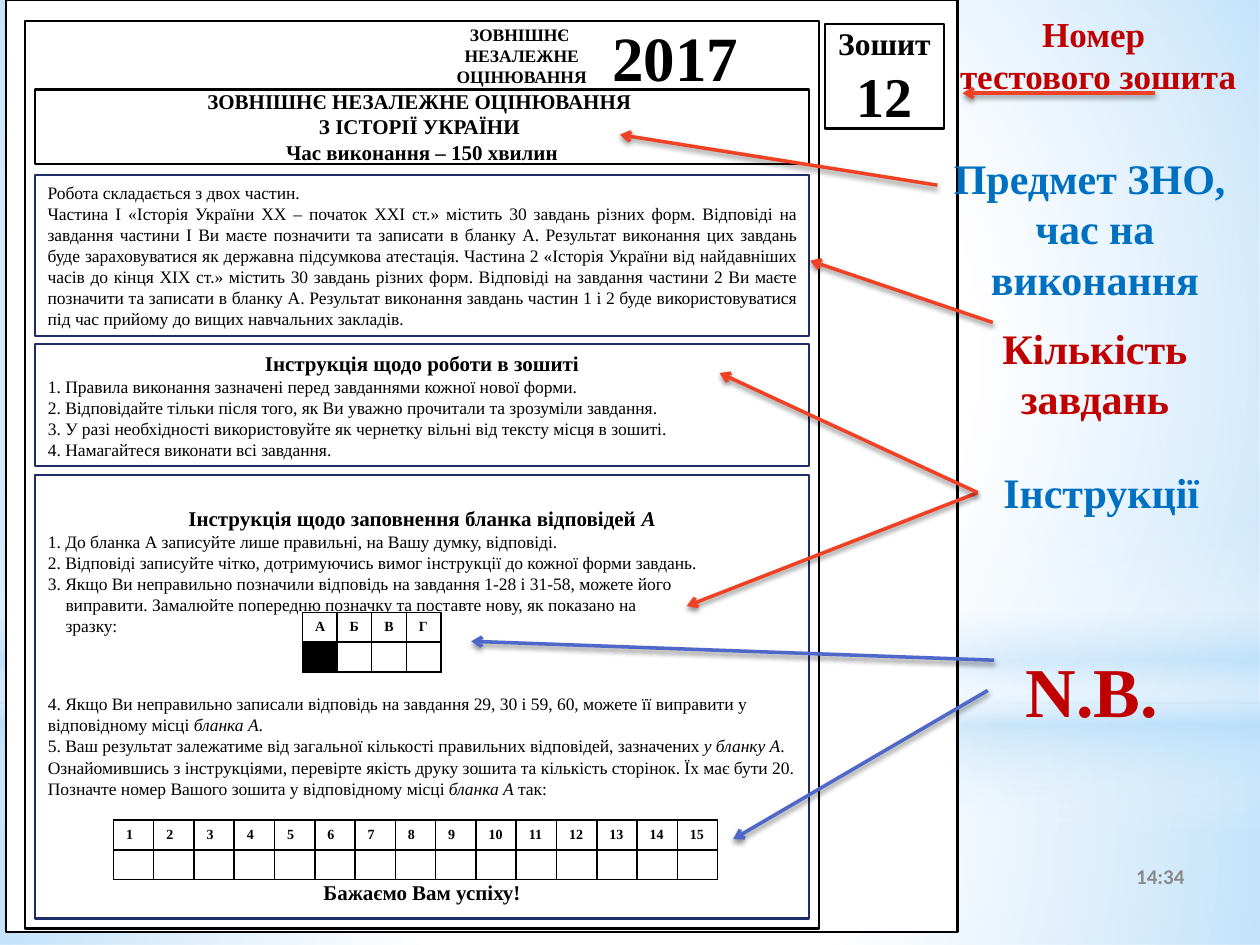
from dataclasses import dataclass
from typing import Optional

from lxml import etree
from pptx import Presentation
from pptx import util as u
from pptx.dml.color import RGBColor
from pptx.enum import shapes, text
from pptx.oxml import parse_xml
from pptx.oxml.ns import nsdecls, qn

EMU_PER_PX = 9144  # 100 px to the inch
FONT = "Times New Roman"
COLORS = {"white": "FFFFFF", "black": "000000", "gray": "898989", "navy": "1F2E69",
          "red": "C00000", "blue": "0070C0", "orange": "F14124", "indigo": "4E67C8",
          "sky": "B4DCFA"}
LEFT, CENTER, RIGHT, JUSTIFY = (getattr(text.PP_ALIGN, name)
                                for name in ("LEFT", "CENTER", "RIGHT", "JUSTIFY"))
TOP, MIDDLE = text.MSO_ANCHOR.TOP, text.MSO_ANCHOR.MIDDLE
RECT, OVAL = shapes.MSO_SHAPE.RECTANGLE, shapes.MSO_SHAPE.OVAL


@dataclass
class Line:
    words: str  # parts between asterisks are italic
    size: int = 10
    bold: bool = False
    align: int = LEFT
    color: str = "black"
    before: int = 0
    margin: int = 0
    hang: int = 0
    font: str = FONT


@dataclass
class Panel:
    box: tuple
    lines: tuple = ()
    border: Optional[str] = None
    fill: Optional[str] = None
    anchor: int = MIDDLE
    top_inset: int = 5
    placeholder: Optional[int] = None


@dataclass
class Glow:
    box: tuple
    stops: tuple  # position %, color, opacity %
    kind: int = RECT
    linear: bool = False


@dataclass
class Grid:
    box: tuple
    labels: tuple
    marked: Optional[int] = None


@dataclass
class Arrow:
    ends: tuple
    color: str = "orange"


def px(*lengths: int) -> list:
    return [u.Emu(length * EMU_PER_PX) for length in lengths]


def rgb(name: str) -> RGBColor:
    return RGBColor.from_string(COLORS[name])


def bold(words: str, size: int, color: str = "black", **extra) -> Line:
    return Line(words, size, True, CENTER, color, **extra)


def draw_glow(slide, glow: Glow, position: int) -> None:
    """Draw a soft gradient and place it on the slide master."""
    shape = slide.shapes.add_shape(glow.kind, *px(*glow.box))
    shape.shadow.inherit = False
    shape.line.fill.background()
    stops = "".join(
        f'<a:gs pos="{pos * 1000}"><a:srgbClr val="{COLORS[color]}">'
        f'<a:alpha val="{opacity * 1000}"/></a:srgbClr></a:gs>' for pos, color, opacity in glow.stops)
    direction = '<a:lin ang="5400000" scaled="0"/>' if glow.linear else (
        '<a:path path="circle"><a:fillToRect l="50000" t="50000" r="50000" b="50000"/></a:path>')
    gradient = parse_xml(f'<a:gradFill {nsdecls("a")}><a:gsLst>{stops}</a:gsLst>{direction}</a:gradFill>')
    shape.element.spPr.find(qn("a:prstGeom")).addnext(gradient)
    shape.element.nvSpPr.cNvPr.set("id", str(100 + position))
    slide.slide_layout.slide_master.shapes.element.insert(2 + position, shape.element)


def write_line(paragraph, line: Line) -> None:
    properties = paragraph._p.get_or_add_pPr()
    properties.set("marL", str(line.margin * EMU_PER_PX))
    properties.set("indent", str(-line.hang * EMU_PER_PX))
    etree.SubElement(properties, qn("a:buNone"))
    paragraph.alignment = line.align
    paragraph.space_before = u.Pt(line.before)
    for index, part in enumerate(line.words.split("*")):
        run = paragraph.add_run()
        run.text = part
        values = {"name": line.font, "size": u.Pt(line.size), "bold": line.bold,
                  "italic": index % 2 == 1}
        for key, value in values.items():
            setattr(run.font, key, value)
        run.font.color.rgb = rgb(line.color)


def draw_panel(slide, panel: Panel) -> None:
    left, top, width, height = px(*panel.box)
    if panel.placeholder is not None:
        shape = slide.placeholders[panel.placeholder]
        slide.shapes.element.append(shape.element)  # bring to front
        for key, value in dict(left=left, top=top, width=width, height=height).items():
            setattr(shape, key, value)
    elif panel.border:
        shape = slide.shapes.add_shape(RECT, left, top, width, height)
        shape.shadow.inherit = False
    else:
        shape = slide.shapes.add_textbox(left, top, width, height)
    if panel.fill:
        shape.fill.solid()
        shape.fill.fore_color.rgb = rgb(panel.fill)
    else:
        shape.fill.background()
    if panel.border:
        shape.line.color.rgb = rgb(panel.border)
        shape.line.width = u.Pt(1.25)
    frame = shape.text_frame
    side, top_inset, bottom = px(10, panel.top_inset, 5)
    values = {"word_wrap": True, "auto_size": text.MSO_AUTO_SIZE.NONE,
              "vertical_anchor": panel.anchor, "margin_left": side, "margin_right": side,
              "margin_top": top_inset, "margin_bottom": bottom}
    for key, value in values.items():
        setattr(frame, key, value)
    for index, line in enumerate(panel.lines):
        write_line(frame.add_paragraph() if index else frame.paragraphs[0], line)


def draw_grid(slide, grid: Grid) -> None:
    count = len(grid.labels)
    left, top, width, height = px(*grid.box)
    table = slide.shapes.add_table(2, count, left, top, width, height).table
    table.first_row = table.horz_banding = False
    for column in table.columns:
        column.width = u.Emu(width // count)
    for row_index, row in enumerate(table.rows):
        row.height = u.Emu(height // 2)
        for index, cell in enumerate(row.cells):
            cell.fill.solid()
            cell.fill.fore_color.rgb = rgb("black" if row_index and index == grid.marked else "white")
            for order, side in enumerate("LRTB"):
                cell._tc.get_or_add_tcPr().insert(order, parse_xml(
                    f'<a:ln{side} {nsdecls("a")} w="12700"><a:solidFill>'
                    f'<a:srgbClr val="{COLORS["black"]}"/></a:solidFill></a:ln{side}>'))
            paragraph = cell.text_frame.paragraphs[0]
            if row_index == 0:
                write_line(paragraph, Line(grid.labels[index], 8, True))
            else:
                paragraph._p.get_or_add_endParaRPr().set("sz", "800")


def draw_arrow(slide, arrow: Arrow) -> None:
    connector = slide.shapes.add_connector(shapes.MSO_CONNECTOR.STRAIGHT, *px(*arrow.ends))
    connector.line.color.rgb = rgb(arrow.color)
    connector.line.width = u.Pt(2)
    etree.SubElement(connector.line._get_or_add_ln(), qn("a:tailEnd"), type="arrow")
    connector.element.spPr.append(parse_xml(
        f'<a:effectLst {nsdecls("a")}><a:outerShdw blurRad="39370" dist="22860" dir="5400000">'
        f'<a:srgbClr val="{COLORS["black"]}"><a:alpha val="45000"/></a:srgbClr>'
        '</a:outerShdw></a:effectLst>'))


GLOWS = (
    Glow((0, 558, 1000, 192), ((0, "white", 91), (37, "white", 76), (100, "sky", 79))),
    Glow((0, 0, 1000, 558), ((0, "white", 89), (48, "white", 62), (100, "sky", 79))),
    Glow((0, 412, 1000, 250), ((0, "white", 0), (29, "white", 30), (45, "sky", 40),
                               (55, "white", 26), (65, "sky", 60), (100, "white", 0)), linear=True),
    Glow((0, 175, 1000, 558), ((0, "white", 100), (56, "white", 0)), OVAL),
)

PANELS = (
    # Clock, page and booklet cover
    Panel((675, 675, 275, 40), (Line("14:34", 12, True, RIGHT, "gray", font="Calibri"),)),
    Panel((5, 0, 755, 740), border="black", fill="white"),
    Panel((20, 17, 630, 720), border="black"),
    Panel((655, 19, 94, 83), (bold("Зошит", 18), bold("12", 32)), "black", "white"),
    Panel((335, 17, 158, 54), (bold("ЗОВНІШНЄ ", 10), bold("НЕЗАЛЕЖНЕ ОЦІНЮВАННЯ", 10))),
    Panel((469, 18, 134, 54), (bold("2017", 36),)),
    Panel((28, 71, 614, 59), (bold("ЗОВНІШНЄ НЕЗАЛЕЖНЕ ОЦІНЮВАННЯ ", 12),
                              bold("З ІСТОРІЇ УКРАЇНИ ", 12),
                              bold("Час виконання – 150 хвилин", 12)),
          "black", "white", placeholder=0),
    # Booklet sections
    Panel((28, 139, 614, 128), (
        Line("Робота складається з двох частин."),
        Line("Частина І «Історія України ХХ – початок ХХІ ст.» містить 30 завдань різних форм. "
             "Відповіді на завдання частини І Ви маєте позначити та записати в бланку А. Результат "
             "виконання цих завдань буде зараховуватися як державна підсумкова атестація. Частина 2 "
             "«Історія України від найдавніших часів до кінця ХІХ ст.» містить 30 завдань різних форм. "
             "Відповіді на завдання частини 2 Ви маєте позначити та записати в бланку А. Результат "
             "виконання завдань частин 1 і 2 буде використовуватися під час прийому до вищих "
             "навчальних закладів.", align=JUSTIFY)), "navy"),
    Panel((28, 273, 614, 97), (
        bold("Інструкція щодо роботи в зошиті", 12),
        Line("1. Правила виконання зазначені перед завданнями кожної нової форми."),
        Line("2. Відповідайте тільки після того, як Ви уважно прочитали та зрозуміли завдання."),
        Line("3. У разі необхідності використовуйте як чернетку вільні від тексту місця в зошиті."),
        Line("4. Намагайтеся виконати всі завдання.")), "navy", placeholder=1),
    Panel((28, 377, 614, 352), (
        bold("Інструкція щодо заповнення бланка відповідей *А*", 12),
        Line("1. До бланка А записуйте лише правильні, на Вашу думку, відповіді."),
        Line("2. Відповіді записуйте чітко, дотримуючись вимог інструкції до кожної форми завдань."),
        Line("3. Якщо Ви неправильно позначили відповідь на завдання 1-28 і 31-58, можете його",
             margin=14, hang=14),
        Line("виправити. Замалюйте попередню позначку та поставте нову, як показано на", margin=14),
        Line("зразку:", margin=14),
        Line("4. Якщо Ви неправильно записали відповідь на завдання 29, 30 і 59, 60, можете її "
             "виправити у відповідному місці *бланка А*.", before=33),
        Line("5. Ваш результат залежатиме від загальної кількості правильних відповідей, "
             "зазначених *у бланку А*."),
        Line("Ознайомившись з інструкціями, перевірте якість друку зошита та кількість сторінок. "
             "Їх має бути 20."),
        Line("Позначте номер Вашого зошита у відповідному місці *бланка А* так:"),
        bold("Бажаємо Вам успіху!", 12, before=46)),
        "navy", anchor=TOP, top_inset=24, placeholder=2),
    # Callouts
    Panel((752, 5, 239, 111), (bold("Номер ", 20, "red"), bold("тестового зошита", 20, "red")), anchor=TOP),
    Panel((744, 116, 250, 131), (bold("Предмет ЗНО, ", 24, "blue"),
                                 bold("час на виконання", 24, "blue")), anchor=TOP),
    Panel((764, 365, 220, 51), (bold("Інструкції", 24, "blue"),), anchor=TOP),
    Panel((759, 251, 220, 91), (bold("Кількість завдань", 24, "red"),), anchor=TOP),
    Panel((784, 509, 165, 77), (bold("N.B.", 40, "red"),), anchor=TOP),
)

GRIDS = (Grid((240, 486, 110, 47), tuple("АБВГ"), marked=0),
         Grid((90, 651, 480, 47), tuple(str(number) for number in range(1, 16))))

ARROWS = (Arrow((917, 74, 764, 74)), Arrow((744, 147, 492, 107)), Arrow((788, 256, 643, 207)),
          Arrow((776, 391, 545, 481)), Arrow((776, 391, 571, 296)),
          Arrow((789, 524, 374, 509), "indigo"), Arrow((784, 548, 582, 666), "indigo"))


def main() -> None:
    presentation = Presentation()
    presentation.slide_width, presentation.slide_height = px(1000, 750)
    slide = presentation.slides.add_slide(presentation.slide_layouts[3])
    for position, glow in enumerate(GLOWS):
        draw_glow(slide, glow, position)
    for draw, items in ((draw_panel, PANELS), (draw_grid, GRIDS), (draw_arrow, ARROWS)):
        for item in items:
            draw(slide, item)
    presentation.save("out.pptx")


if __name__ == "__main__":
    main()
